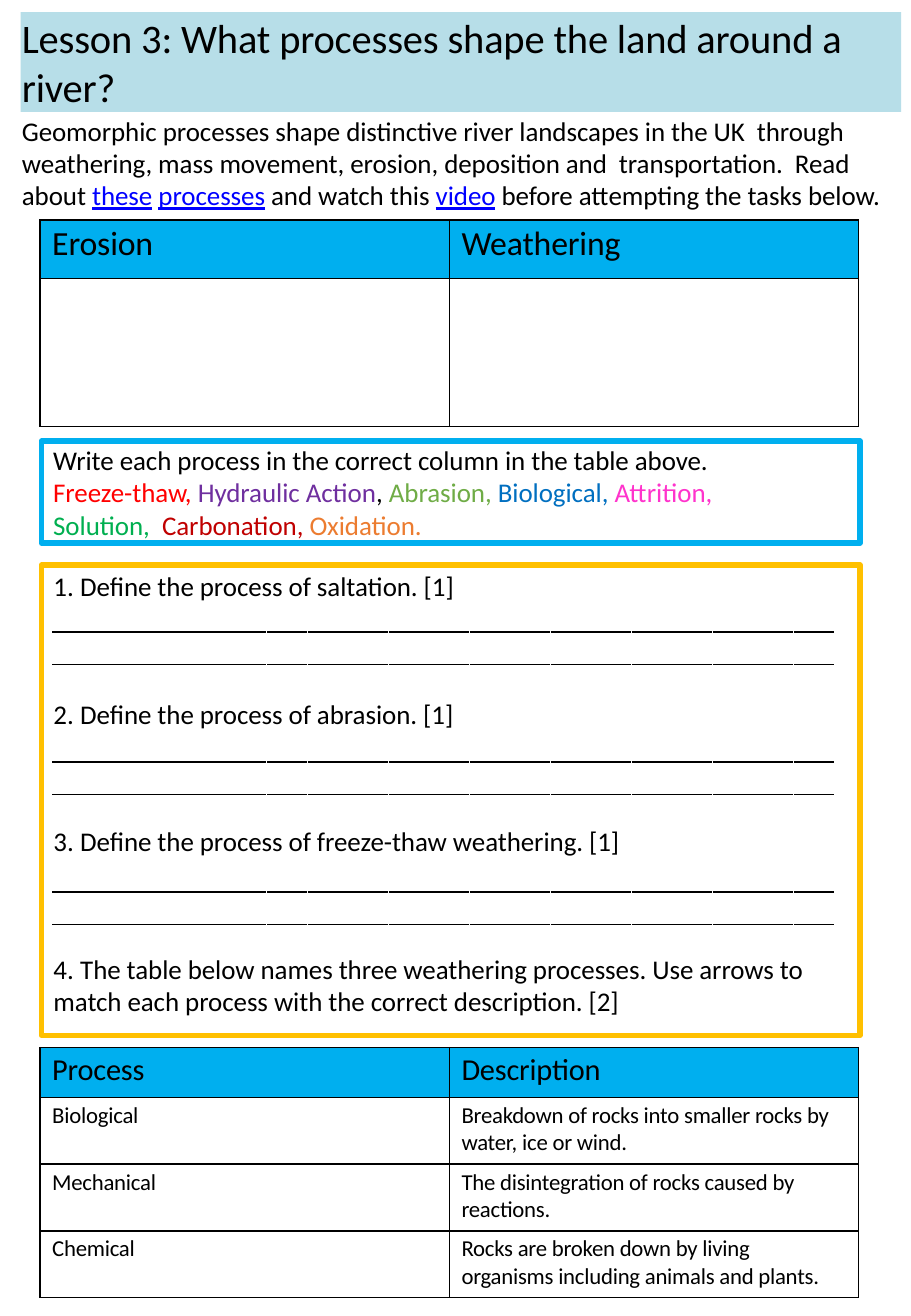
from lxml.etree import SubElement
from pptx import Presentation
from pptx.dml.color import RGBColor
from pptx.enum.shapes import MSO_SHAPE as Shape
from pptx.enum.text import MSO_ANCHOR as Anchor, MSO_AUTO_SIZE as AutoSize, PP_ALIGN as Align
from pptx.oxml.ns import qn
from pptx.util import Inches, Pt

COLORS = {
    "black": "000000", "white": "FFFFFF", "title": "B7DEE8", "blue": "00AFEF",
    "gold": "FFC000", "link": "0000FF", "red": "FF0000", "purple": "6F2F9F",
    "lime": "6FAC46", "azure": "006FC0", "pink": "FF33CC", "green": "00AF50",
    "crimson": "C00000", "orange": "EC7C30",
}
COLORS = {name: RGBColor.from_string(value) for name, value in COLORS.items()}


def add_run(paragraph, text, size, color="black"):
    paragraph.alignment = Align.LEFT
    run = paragraph.add_run()
    run.text = text
    run.font.name = "Calibri"
    run.font.size = Pt(size)
    run.font.bold = False
    run.font.color.rgb = COLORS[color]
    # Letter spacing in hundredths of a point
    run._r.get_or_add_rPr().set("spc", "-4" if size == 16 else "-10")
    return run


def add_grid(top, heights, rows, header_size):
    frame = slide.shapes.add_table(
        len(rows), 2, Inches(0.33), Inches(top), Inches(6.74), Inches(sum(heights)))
    table = frame.table
    table.first_row = table.horz_banding = False
    for row_index, (height, texts) in enumerate(zip(heights, rows)):
        table.rows[row_index].height = Inches(height)
        for column_index, text in enumerate(texts):
            cell = table.cell(row_index, column_index)
            cell.margin_left, cell.margin_right = Inches(0.1), Inches(0.15)
            cell.margin_top, cell.margin_bottom = Inches(0.04 if row_index else 0.03), 0
            # Black one-point border on every side
            for side in ("a:lnL", "a:lnR", "a:lnT", "a:lnB"):
                border = SubElement(cell._tc.get_or_add_tcPr(), qn(side), w="12700")
                fill = SubElement(border, qn("a:solidFill"))
                SubElement(fill, qn("a:srgbClr"), val=str(COLORS["black"]))
            cell.fill.solid()
            cell.fill.fore_color.rgb = COLORS["white" if row_index else "blue"]
            if text:
                paragraph = cell.text_frame.paragraphs[0]
                add_run(paragraph, text, 13.5 if row_index else header_size)
                if row_index:
                    paragraph.line_spacing = Pt(16.1)


presentation = Presentation()
presentation.slide_width, presentation.slide_height = Inches(7.5), Inches(10.83)
slide = presentation.slides.add_slide(presentation.slide_layouts[1])
title, questions = slide.shapes.title, slide.placeholders[1]
intro = slide.shapes.add_textbox(0, 0, 0, 0)
task = slide.shapes.add_shape(Shape.RECTANGLE, 0, 0, 0, 0)
task.shadow.inherit = False

# Place the four text areas: left, top, width, height, text inset left and top
for shape, box in (
    (title, (0.17, 0.1, 7.25, 0.82, 0.01, 0.01)),
    (intro, (0.17, 0.93, 7.25, 0.82, 0.01, 0.01)),
    (task, (0.34, 3.63, 6.74, 0.84, 0.1, 0.02)),
    (questions, (0.34, 4.65, 6.74, 3.87, 0.1, 0.04)),
):
    shape.left, shape.top, shape.width, shape.height = map(Inches, box[:4])
    text_frame = shape.text_frame
    text_frame.word_wrap = True
    text_frame.auto_size = AutoSize.NONE
    text_frame.vertical_anchor = Anchor.TOP
    text_frame.margin_left, text_frame.margin_top = map(Inches, box[4:])
    text_frame.margin_right = text_frame.margin_bottom = 0

# Title band
title.fill.solid()
title.fill.fore_color.rgb = COLORS["title"]
add_run(title.text_frame.paragraphs[0],
        "Lesson 3: What processes shape the land around a river?", 24)

# Introduction
for text, color in (
    ("Geomorphic processes shape distinctive river landscapes in the UK  through "
     "weathering, mass movement, erosion, deposition and  transportation.  Read about ",
     "black"),
    ("these", "link"), (" ", "black"), ("processes", "link"),
    (" and watch this ", "black"), ("video", "link"),
    (" before attempting the tasks below.", "black"),
):
    run = add_run(intro.text_frame.paragraphs[0], text, 16, color)
    run.font.underline = color == "link"

# Sorting table
add_grid(1.81, (0.48, 1.22), (("Erosion", "Weathering"), ("", "")), 20)

# Sorting task
task.fill.background()
task.text_frame.margin_right = Inches(0.5)
add_run(task.text_frame.paragraphs[0],
        "Write each process in the correct column in the table above.", 16)
process_list = task.text_frame.add_paragraph()
for text, color in (
    ("Freeze-thaw, ", "red"), ("Hydraulic ", "purple"), ("Action", "purple"),
    (", ", "black"), ("Abrasion, ", "lime"), ("Biological, ", "azure"),
    ("Attrition, ", "pink"), ("Solution,  ", "green"),
    ("Carbonation, ", "crimson"), ("Oxidation.", "orange"),
):
    add_run(process_list, text, 16, color)

# Frames of the task and the questions
for shape, color in ((task, "blue"), (questions, "gold")):
    shape.line.color.rgb = COLORS[color]
    shape.line.width = Pt(3.12)

# Numbered questions, with room for answers between them
for index, text in enumerate((
    "Define the process of saltation. [1]",
    "Define the process of abrasion. [1]",
    "Define the process of freeze-thaw weathering. [1]",
    "The table below names three weathering processes. Use arrows to",
    "match each process with the correct description. [2]",
)):
    frame = questions.text_frame
    paragraph = frame.add_paragraph() if index else frame.paragraphs[0]
    paragraph.space_before = Pt(56.3 if index in (1, 2, 3) else 0)
    numbered = index < 4
    properties = paragraph._p.get_or_add_pPr()
    properties.set("marL", str(Inches(0.22 if numbered else 0)))
    properties.set("indent", str(Inches(-0.22 if numbered else 0)))
    if numbered:
        SubElement(properties, qn("a:buFont"), typeface="Calibri")
        SubElement(properties, qn("a:buAutoNum"), type="arabicPeriod")
    else:
        SubElement(properties, qn("a:buNone"))
    add_run(paragraph, text, 16)

# Two answer lines under each of the first three questions
segments = [(0.43, 2.19)] + [(2.2 + i / 3, 2.53 + i / 3) for i in range(14)]
for question in range(3):
    for row in range(2):
        y = Inches(5.2 + 1.07 * question + 0.27 * row)
        builder = slide.shapes.build_freeform(Inches(segments[0][0]), y)
        for start, end in segments:
            if start > segments[0][0]:
                builder.move_to(Inches(start), y)
            builder.add_line_segments([(Inches(end), y)], close=False)
        answer_line = builder.convert_to_shape()
        answer_line.shadow.inherit = False
        answer_line.fill.background()
        answer_line.line.color.rgb = COLORS["black"]
        answer_line.line.width = Pt(0.82)

# Matching table
add_grid(8.62, (0.41, 0.55, 0.55, 0.55), (
    ("Process", "Description"),
    ("Biological", "Breakdown of rocks into smaller rocks by  water, ice or wind."),
    ("Mechanical", "The disintegration of rocks caused by reactions."),
    ("Chemical", "Rocks are broken down by living  organisms including animals and plants."),
), 18)

presentation.save("out.pptx")
